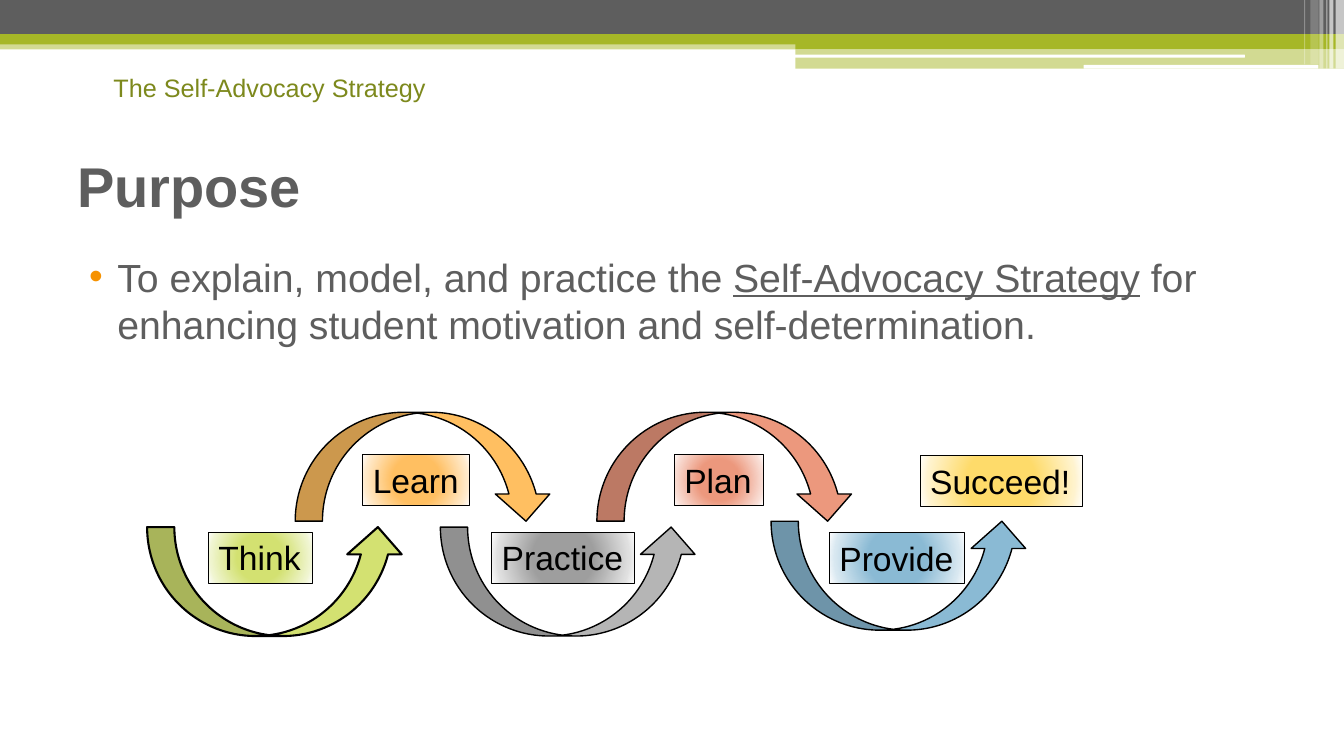
from dataclasses import dataclass

from lxml.etree import SubElement
from pptx import Presentation
from pptx.dml.color import RGBColor
from pptx.enum.shapes import MSO_SHAPE
from pptx.enum.text import MSO_ANCHOR, PP_ALIGN
from pptx.oxml.ns import qn
from pptx.util import Pt


@dataclass(frozen=True)
class Theme:
    """Colours, font and type sizes of the slide."""
    font: str = "Arial"
    white: str = "FFFFFF"
    black: str = "000000"
    gray: str = "5E5E5E"
    green: str = "A6B727"
    olive: str = "7D891D"
    bullet: str = "F69200"
    title: int = 40
    body: int = 28
    label: int = 24
    header: int = 18


THEME = Theme()


def add_text(para, text, size, color, bold=False, underline=False):
    """Append a formatted span to a paragraph."""
    span = para.add_run()
    span.text = text
    font = span.font
    font.name, font.size = THEME.font, Pt(size)
    font.bold, font.underline = bold, underline
    font.color.rgb = RGBColor.from_string(color)


def add_box(page, kind, box, fill=None, alpha=100, line=0):
    """Place a preset shape at (left, top, width, height)."""
    shape = page.shapes.add_shape(kind, *map(Pt, box))
    shape.shadow.inherit = False
    if fill:
        shape.fill.solid()
        shape.fill.fore_color.rgb = RGBColor.from_string(fill)
        if alpha < 100:
            color = shape.fill._xPr.find(qn("a:solidFill"))[0]
            SubElement(color, qn("a:alpha"), val=str(alpha * 1000))
    else:
        shape.fill.background()
    if line:
        shape.line.color.rgb = RGBColor.from_string(THEME.black)
        shape.line.width = Pt(line)
    else:
        shape.line.fill.background()
    return shape


def glow(shape, center, rim):
    """Fill a shape with a gradient from its centre to white edges."""
    properties = shape.element.spPr
    gradient = SubElement(properties, qn("a:gradFill"), rotWithShape="1")
    stops = SubElement(gradient, qn("a:gsLst"))
    for position, color in ((40, center), (86, rim), (100, THEME.white)):
        stop = SubElement(stops, qn("a:gs"), pos=str(position * 1000))
        SubElement(stop, qn("a:srgbClr"), val=color)
    route = SubElement(gradient, qn("a:path"), path="circle")
    SubElement(route, qn("a:fillToRect"), {side: "50000" for side in "ltrb"})
    properties.replace(properties.find(qn("a:noFill")), gradient)


def draw_banner(page, left, top, width):
    """Draw the gray and green bands with stripes at the right end."""
    right = left + width
    half = 391.8
    bands = (
        (0, 28.8, width, 6.5, THEME.green, 50),
        (0, 0, width, 24.5, THEME.gray, 100),
        (0, 24.5, width, 7.2, THEME.green, 100),
        (width - half, 28, half, 7.2, THEME.green, 100),
        (width - half, 35.2, half, 13.8, THEME.green, 50),
    )
    for x, y, w, h, color, alpha in bands:
        add_box(page, MSO_SHAPE.RECTANGLE, (left + x, top + y, w, h), color, alpha)
    for x, y, w, h in ((567.4, 39, 321.8, 2.2), (774, 46.4, 167.8, 2.6)):
        add_box(page, MSO_SHAPE.ROUNDED_RECTANGLE, (left + x, top + y, w, h), THEME.white)
    stripes = ((6, 6, 49, 65), (10.4, 2.9, 49, 65), (12.5, 0.7, 49, 60),
               (17.6, 2.9, 49, 40), (24, 6, 46, 20), (28.4, 0.7, 46, 30))
    for offset, w, h, alpha in stripes:
        add_box(page, MSO_SHAPE.RECTANGLE, (right - offset, top, w, h), THEME.white, alpha)


def draw_header(page, left, top, width, height):
    """Write the strategy name above the title."""
    frame = page.shapes.add_textbox(*map(Pt, (left, top, width, height))).text_frame
    frame.word_wrap = False
    add_text(frame.paragraphs[0], "The Self-Advocacy Strategy", THEME.header, THEME.olive)


def draw_title(page, left, top, width, height):
    """Place and format the title placeholder."""
    title = page.shapes.title
    title.left, title.top, title.width, title.height = map(Pt, (left, top, width, height))
    frame = title.text_frame
    frame.vertical_anchor = MSO_ANCHOR.MIDDLE
    para = frame.paragraphs[0]
    para.alignment = PP_ALIGN.LEFT
    add_text(para, "Purpose", THEME.title, THEME.gray, bold=True)


def draw_body(page, left, top, width, height):
    """Write the bulleted purpose statement."""
    frame = page.shapes.add_textbox(*map(Pt, (left, top, width, height))).text_frame
    frame.word_wrap = True
    para = frame.paragraphs[0]
    properties = para._p.get_or_add_pPr()
    properties.set("marL", str(Pt(28.8)))
    properties.set("indent", str(Pt(-20.2)))
    color = SubElement(properties, qn("a:buClr"))
    SubElement(color, qn("a:srgbClr"), val=THEME.bullet)
    SubElement(properties, qn("a:buFont"), typeface=THEME.font)
    SubElement(properties, qn("a:buChar"), char="•")
    for text, underline in (
        ("To explain, model, and practice the ", False),
        ("Self-Advocacy Strategy", True),
        (" for enhancing student motivation and self-determination.", False),
    ):
        add_text(para, text, THEME.body, THEME.gray, underline=underline)


def draw_steps(page, left, top):
    """Draw the wave of curved arrows and the label of each step."""
    arrows = (
        (0, 82, "D3E171", 1.5, False),
        (209.5, 82, "B5B5B5", 1, False),
        (445.7, 77.8, "8ABAD4", 1, False),
        (105.8, 0, "FFBF61", 1, True),
        (321.3, 0, "EC987D", 1, True),
    )
    for x, y, color, line, flipped in arrows:
        box = (left + x, top + y, 184.3, 77.8)
        arrow = add_box(page, MSO_SHAPE.CURVED_UP_ARROW, box, color, line=line)
        if flipped:
            arrow.element.spPr.get_or_add_xfrm().set("flipV", "1")
    labels = (
        ("Think", 43.9, 85.7, 74.2, "D3E171", "F0F5D0"),
        ("Learn", 154.1, 30.2, 76.3, "FFBF61", "FFEACA"),
        ("Practice", 246.2, 85.7, 102.2, "9E9E9E", "DFDFDF"),
        ("Plan", 376.6, 30.2, 63.4, "EC987D", "F9DDD4"),
        ("Provide", 487.4, 85.9, 96.5, "8ABAD4", "D8E8F1"),
        ("Succeed!", 552.2, 31, 115.9, "FEDB6A", "FFF3CD"),
    )
    for text, x, y, width, center, rim in labels:
        label = add_box(page, MSO_SHAPE.RECTANGLE, (left + x, top + y, width, 36.3), line=0.75)
        glow(label, center, rim)
        frame = label.text_frame
        frame.word_wrap = False
        frame.vertical_anchor = MSO_ANCHOR.TOP
        para = frame.paragraphs[0]
        para.alignment = PP_ALIGN.LEFT
        add_text(para, text, THEME.label, THEME.black)


def main():
    """Build the slide and save the deck."""
    deck = Presentation()
    deck.slide_width, deck.slide_height = Pt(960), Pt(540)
    page = deck.slides.add_slide(deck.slide_layouts[5])
    draw_banner(page, 0, 0, 960)
    draw_header(page, 74, 48.2, 239.8, 28.8)
    draw_body(page, 48, 177.1, 864, 340.6)
    draw_title(page, 48, 90, 864, 84.2)
    draw_steps(page, 105.1, 294.5)
    deck.save("out.pptx")


if __name__ == "__main__":
    main()
